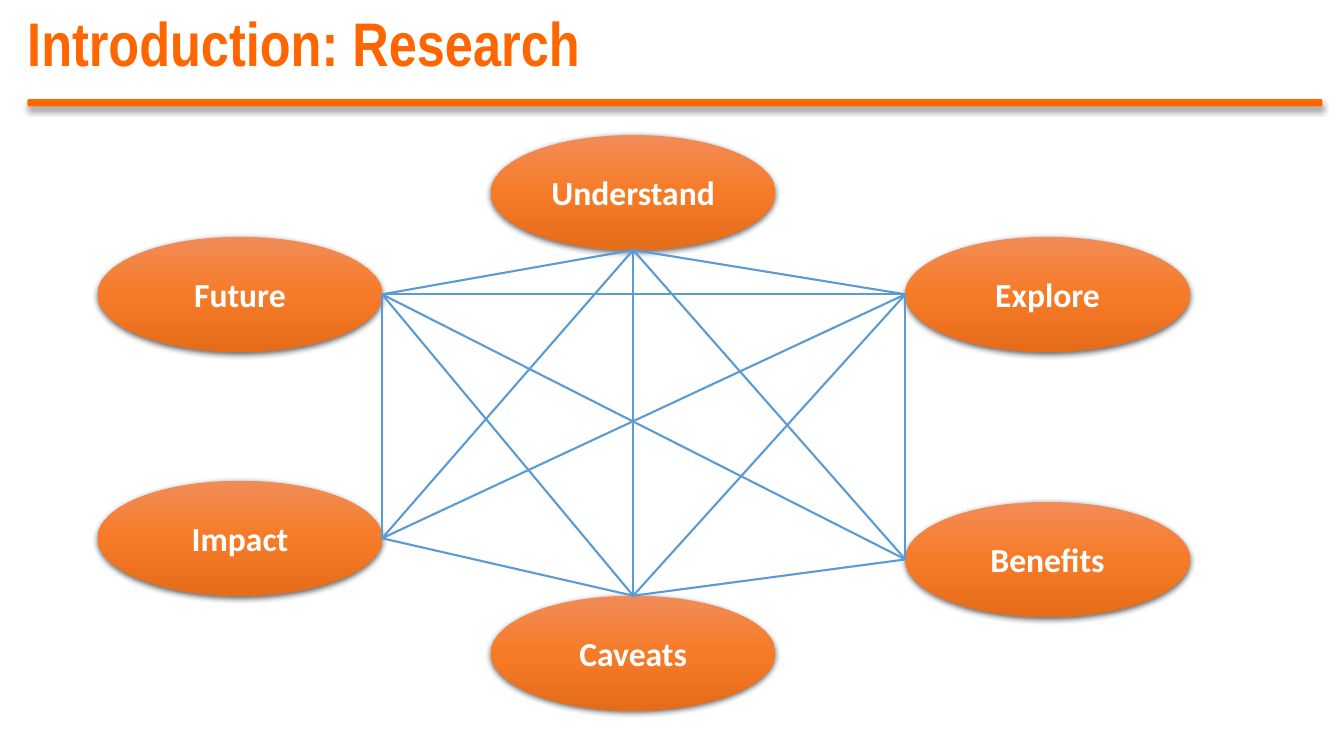
"""Build a slide linking six research themes in a web."""
from dataclasses import dataclass
from itertools import combinations

from pptx import Presentation
from pptx.dml.color import RGBColor
from pptx.enum.shapes import MSO_CONNECTOR, MSO_SHAPE
from pptx.enum.text import MSO_ANCHOR, MSO_AUTO_SIZE, PP_ALIGN
from pptx.oxml import parse_xml
from pptx.oxml.ns import nsdecls
from pptx.util import Inches, Pt

STRAIGHT = MSO_CONNECTOR.STRAIGHT
OVAL, BAR = MSO_SHAPE.OVAL, MSO_SHAPE.ROUNDED_RECTANGLE
TOP, MIDDLE = MSO_ANCHOR.TOP, MSO_ANCHOR.MIDDLE
LEFT, CENTER = PP_ALIGN.LEFT, PP_ALIGN.CENTER
FIXED_SIZE = MSO_AUTO_SIZE.NONE
TITLE_ONLY = 5


@dataclass(frozen=True)
class Theme:
    accent: str = "FF6600"
    link: str = "5B9BD5"
    label: str = "FFFFFF"
    shadow: str = "000000"
    gradient: tuple = ((0, "F18C57"), (50, "F67B28"), (100, "E56C19"))
    title_font: str = "Arial Narrow"
    label_font: str = "Calibri"
    title_size: int = 44
    label_size: int = 24
    link_width: float = 1.5


class ThemeWeb:
    def __init__(self, slide, theme):
        self.slide, self.theme = slide, theme

    def set_text(self, frame, text, font_name, size, color, align, anchor):
        frame.word_wrap = True
        frame.auto_size = FIXED_SIZE
        frame.vertical_anchor = anchor
        frame.text = text
        paragraph = frame.paragraphs[0]
        paragraph.alignment = align
        font = paragraph.font
        font.name, font.size, font.bold = font_name, Pt(size), True
        font.color.rgb = RGBColor.from_string(color)

    def cast_shadow(self, shape, opacity, blur, distance):
        shape._element.spPr.append(parse_xml(
            f'<a:effectLst {nsdecls("a")}><a:outerShdw blurRad="{Pt(blur)}" '
            f'dist="{Pt(distance)}" dir="5400000" rotWithShape="0">'
            f'<a:srgbClr val="{self.theme.shadow}"><a:alpha val="{opacity * 1000}"/>'
            '</a:srgbClr></a:outerShdw></a:effectLst>'))

    def title(self, text, left, top, width, height):
        heading = self.slide.shapes.title
        heading.left, heading.top = Inches(left), Inches(top)
        heading.width, heading.height = Inches(width), Inches(height)
        self.set_text(heading.text_frame, text, self.theme.title_font,
                      self.theme.title_size, self.theme.accent, LEFT, TOP)

    def rule(self, left, top, width, height):
        bar = self.slide.shapes.add_shape(
            BAR, Inches(left), Inches(top), Inches(width), Inches(height))
        color = RGBColor.from_string(self.theme.accent)
        bar.fill.solid()
        bar.fill.fore_color.rgb = color
        bar.line.color.rgb = color
        bar.line.width = Pt(1)
        self.cast_shadow(bar, 40, 4, 3)

    def bubble(self, text, left, top, width, height):
        oval = self.slide.shapes.add_shape(
            OVAL, Inches(left), Inches(top), Inches(width), Inches(height))
        stops = "".join(
            f'<a:gs pos="{position * 1000}"><a:srgbClr val="{color}"/></a:gs>'
            for position, color in self.theme.gradient)
        oval._element.spPr.insert(2, parse_xml(
            f'<a:gradFill {nsdecls("a")} rotWithShape="1"><a:gsLst>{stops}</a:gsLst>'
            '<a:lin ang="5400000" scaled="0"/></a:gradFill>'))
        oval.line.fill.background()
        self.cast_shadow(oval, 63, 4.5, 1.5)
        self.set_text(oval.text_frame, text, self.theme.label_font,
                      self.theme.label_size, self.theme.label, CENTER, MIDDLE)

    def link(self, start, end):
        line = self.slide.shapes.add_connector(
            STRAIGHT, *(Inches(length) for length in (*start, *end)))
        line.line.color.rgb = RGBColor.from_string(self.theme.link)
        line.line.width = Pt(self.theme.link_width)
        line._element.spPr.append(parse_xml(f'<a:effectLst {nsdecls("a")}/>'))


def main():
    presentation = Presentation()
    presentation.slide_width, presentation.slide_height = Inches(13.33), Inches(7.5)
    slide = presentation.slides.add_slide(presentation.slide_layouts[TITLE_ONLY])
    web = ThemeWeb(slide, Theme())

    web.title("Introduction: Research", 0.17, 0, 13.33, 0.84)
    web.rule(0.28, 0.99, 12.83, 0.06)

    width, height = 2.82, 1.14
    left_column, center_column, right_column = 0.97, 4.87, 8.98
    right_side, left_side = (width, height / 2), (0, height / 2)
    bottom, top = (width / 2, height), (width / 2, 0)
    topics = (
        ("Future", left_column, 2.35, right_side),
        ("Understand", center_column, 1.34, bottom),
        ("Explore", right_column, 2.35, left_side),
        ("Caveats", center_column, 5.91, top),
        ("Impact", left_column, 4.77, right_side),
        ("Benefits", right_column, 4.98, left_side),
    )
    anchors = {}
    for topic, x, y, (dx, dy) in topics:
        web.bubble(topic, x, y, width, height)
        anchors[topic] = (x + dx, y + dy)

    for first, second in combinations(anchors, 2):
        if (first, second) != ("Impact", "Benefits"):
            web.link(anchors[first], anchors[second])

    presentation.save("out.pptx")


if __name__ == "__main__":
    main()
